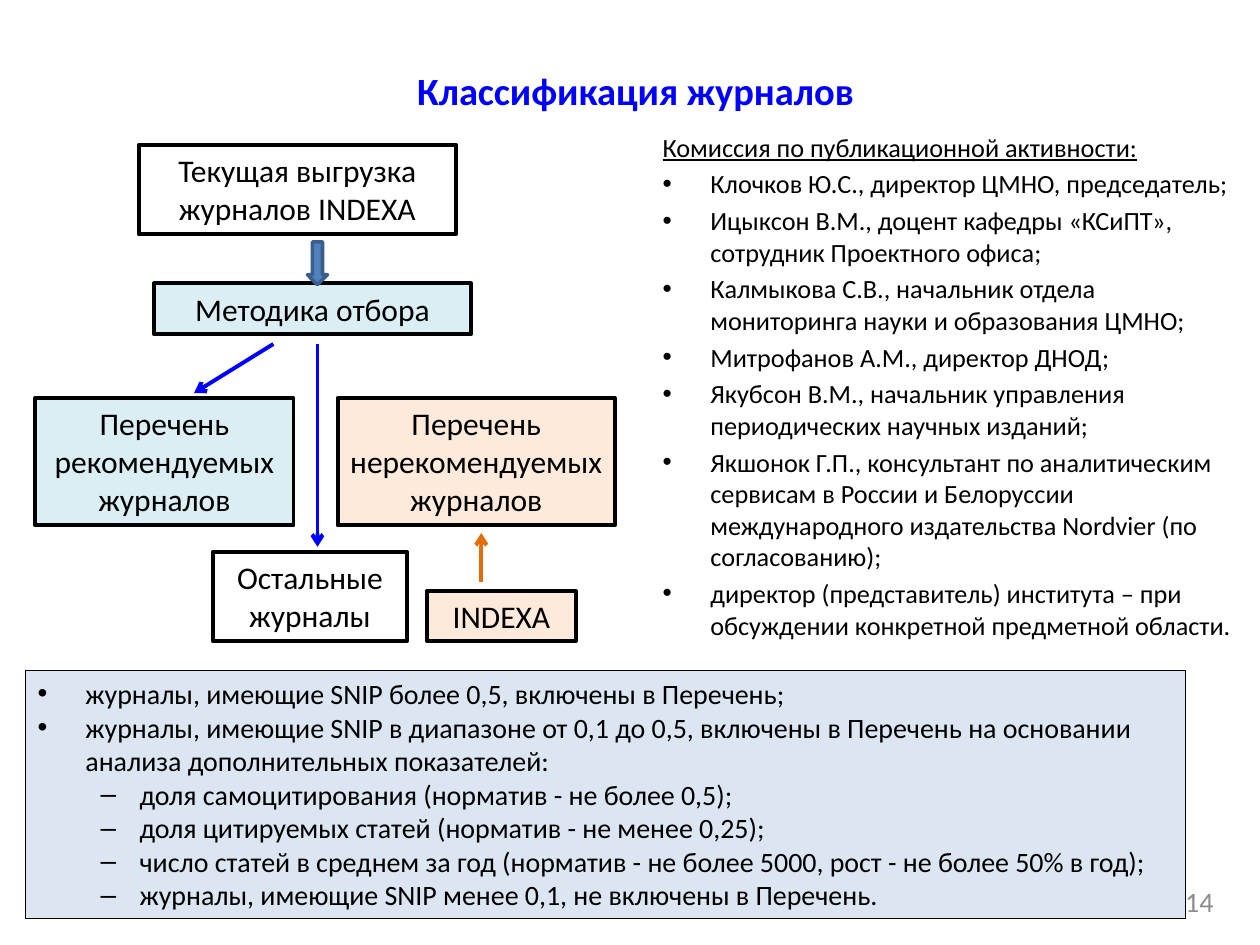
from lxml import etree
from pptx import Presentation
from pptx.dml.color import RGBColor
from pptx.enum.shapes import MSO_CONNECTOR, MSO_SHAPE
from pptx.enum.text import MSO_ANCHOR, PP_ALIGN
from pptx.oxml.ns import qn
from pptx.util import Inches, Pt

RECT, DOWN_ARROW = MSO_SHAPE.RECTANGLE, MSO_SHAPE.DOWN_ARROW
STRAIGHT = MSO_CONNECTOR.STRAIGHT
LEFT, CENTER, RIGHT = PP_ALIGN.LEFT, PP_ALIGN.CENTER, PP_ALIGN.RIGHT
TOP, MIDDLE = MSO_ANCHOR.TOP, MSO_ANCHOR.MIDDLE

FONT = "Calibri"
COLORS = {
    "black": "000000", "blue": "0000FF", "gray": "8C8C8C",
    "aqua": "DBEEF4", "peach": "FDEADA", "panel": "DCE6F2",
    "orange": "E46C0A", "arrow": "4F81BD", "arrow_line": "3A5F8C",
}

BOXES = [
    ("Текущая выгрузка журналов INDEXA", 1.1, 1.15, 2.52, 0.71, None),
    ("Методика отбора", 1.22, 2.25, 2.52, 0.4, "aqua"),
    ("Перечень рекомендуемых журналов", 0.28, 3.16, 2.05, 1.01, "aqua"),
    ("Перечень нерекомендуемых журналов", 2.68, 3.16, 2.2, 1.01, "peach"),
    ("Остальные журналы", 1.69, 4.38, 1.54, 0.71, None),
    ("INDEXA", 3.39, 4.69, 1.18, 0.4, "peach"),
]
ARROWS = [
    (2.17, 2.73, 1.54, 3.12, "blue"),
    (2.52, 2.73, 2.52, 4.34, "blue"),
    (3.82, 4.62, 3.82, 4.23, "orange"),
]
COMMISSION = [
    "Клочков Ю.С., директор ЦМНО, председатель;",
    "Ицыксон В.М., доцент кафедры «КСиПТ», сотрудник Проектного офиса;",
    "Калмыкова С.В., начальник отдела мониторинга науки и образования ЦМНО;",
    "Митрофанов А.М., директор ДНОД;",
    "Якубсон В.М., начальник управления периодических научных изданий;",
    "Якшонок Г.П., консультант по аналитическим сервисам в России и Белоруссии "
    "международного издательства Nordvier (по согласованию);",
    "директор (представитель) института – при обсуждении конкретной предметной области.",
]
RULES = [
    "журналы, имеющие SNIP более 0,5, включены в Перечень;",
    "журналы, имеющие SNIP в диапазоне от 0,1 до 0,5, включены в Перечень "
    "на основании анализа дополнительных показателей:",
]
INDICATORS = [
    "доля самоцитирования (норматив - не более 0,5);",
    "доля цитируемых статей (норматив - не менее 0,25);",
    "число статей в среднем за год (норматив - не более 5000, рост - не более 50% в год);",
    "журналы, имеющие SNIP менее 0,1, не включены в Перечень.",
]


def rgb(name):
    return RGBColor.from_string(COLORS[name])


def setup_frame(sp, anchor):
    tf = sp.text_frame
    tf.word_wrap = True
    tf.vertical_anchor = anchor
    return tf


def add_textbox(s, x, y, w, h, anchor=TOP):
    return setup_frame(s.shapes.add_textbox(Inches(x), Inches(y), Inches(w), Inches(h)), anchor)


def add_shape(s, kind, x, y, w, h, fill, line="black", width=2.25):
    sp = s.shapes.add_shape(kind, Inches(x), Inches(y), Inches(w), Inches(h))
    sp.shadow.inherit = False
    if fill:
        sp.fill.solid()
        sp.fill.fore_color.rgb = rgb(fill)
    else:
        sp.fill.background()
    sp.line.color.rgb = rgb(line)
    sp.line.width = Pt(width)
    return setup_frame(sp, TOP)


def add_paragraph(tf, text, size, color="black", align=LEFT, before=0, bold=False, underline=False):
    p = tf.paragraphs[0]
    if p.runs:
        p = tf.add_paragraph()
    p.alignment = align
    p.space_before = Pt(before)
    r = p.add_run()
    r.text = text
    r.font.name = FONT
    r.font.size = Pt(size)
    r.font.bold = bold
    r.font.underline = underline
    r.font.color.rgb = rgb(color)
    return p


def add_bullets(tf, items, size, before=0, char="•", margin=0.38, hang=0.38, level=0):
    for text in items:
        p = add_paragraph(tf, text, size, before=before)
        p.level = level
        pPr = p._p.get_or_add_pPr()
        pPr.set("marL", str(Inches(margin)))
        pPr.set("indent", str(-Inches(hang)))
        etree.SubElement(pPr, qn("a:buFont"), typeface="Arial")
        etree.SubElement(pPr, qn("a:buChar"), char=char)


def add_arrow(s, x1, y1, x2, y2, color):
    c = s.shapes.add_connector(STRAIGHT, Inches(x1), Inches(y1), Inches(x2), Inches(y2))
    c.line.color.rgb = rgb(color)
    c.line.width = Pt(2.25)
    etree.SubElement(c.line._get_or_add_ln(), qn("a:tailEnd"), type="arrow")
    etree.SubElement(c._element.spPr, qn("a:effectLst"))


def main():
    prs = Presentation()
    prs.slide_width, prs.slide_height = Inches(10), Inches(7.5)
    s = prs.slides.add_slide(prs.slide_layouts[6])

    tf = add_textbox(s, 0.28, 0.44, 9.53, 0.55, MIDDLE)
    add_paragraph(tf, "Классификация журналов", 22, "blue", CENTER, bold=True)

    tf = add_textbox(s, 5.16, 0.99, 4.72, 4.11)
    add_paragraph(tf, "Комиссия по публикационной активности:", 15, before=3, underline=True)
    add_bullets(tf, COMMISSION, 15, before=3)

    tf = add_textbox(s, 7.17, 6.95, 2.56, 0.4, MIDDLE)
    add_paragraph(tf, "14", 16, "gray", RIGHT)

    for text, x, y, w, h, fill in BOXES:
        add_paragraph(add_shape(s, RECT, x, y, w, h, fill), text, 18, align=CENTER)
    add_shape(s, DOWN_ARROW, 2.44, 1.92, 0.16, 0.34, "arrow", "arrow_line", 2)
    for arrow in ARROWS:
        add_arrow(s, *arrow)

    tf = add_shape(s, RECT, 0.2, 5.32, 9.21, 1.97, "panel", width=0.75)
    add_bullets(tf, RULES, 16)
    add_bullets(tf, INDICATORS, 16, char="–", margin=0.81, hang=0.31, level=1)

    prs.save("out.pptx")


if __name__ == "__main__":
    main()
